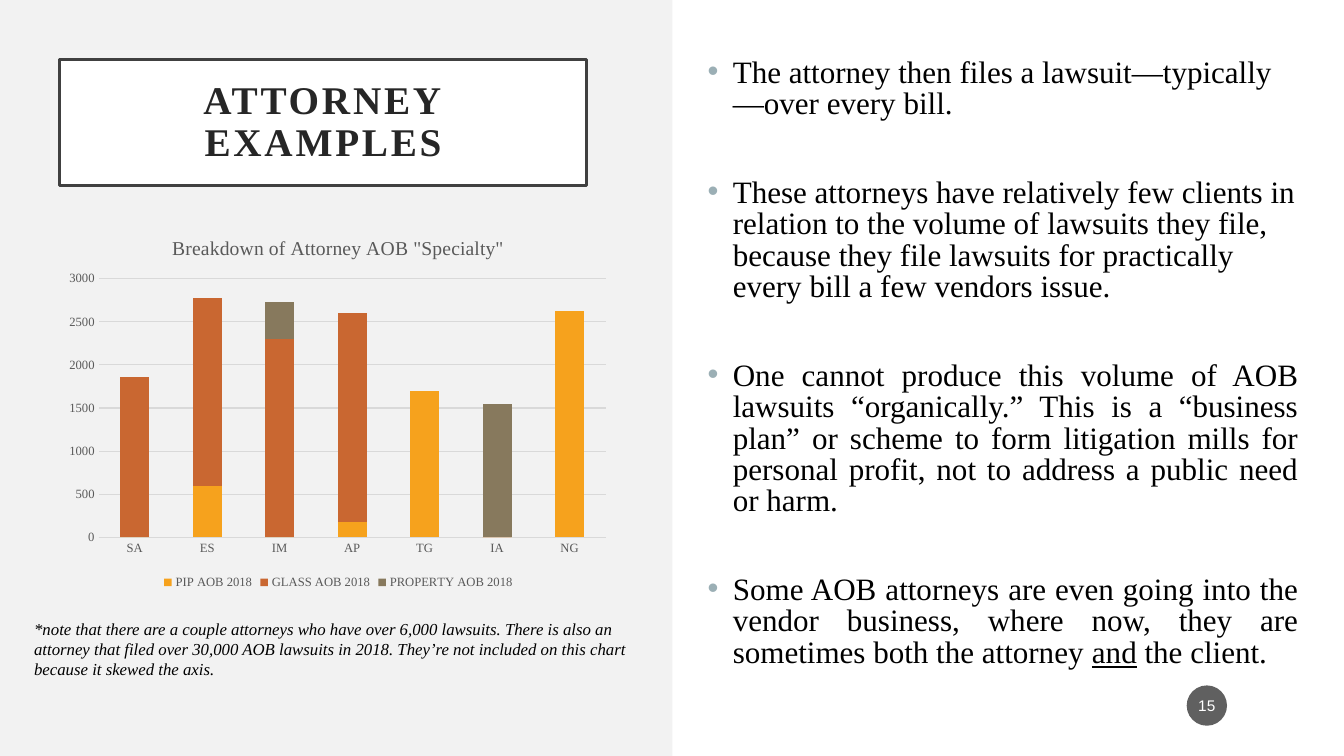
from pptx import Presentation
from pptx import util as u
from pptx.chart.data import CategoryChartData
from pptx.dml.color import RGBColor
from pptx.enum import chart as ch, shapes, text
from pptx.oxml import parse_xml
from pptx.oxml.ns import nsdecls, qn

SERIF = "Times New Roman"
GRAY = "595959"
RULE = "D9D9D9"


def color(value):
    return RGBColor.from_string(value)


def manual_layout(target=None, **fractions):
    modes = "".join(f'<c:{k}Mode val="edge"/>' for k in "xy")
    inner = '<c:layoutTarget val="inner"/>' if target else ""
    sizes = "".join(f'<c:{k} val="{v}"/>' for k, v in fractions.items())
    return parse_xml(f'<c:layout {nsdecls("c")}><c:manualLayout>{inner}{modes}{sizes}'
                     '</c:manualLayout></c:layout>')


class SlideBuilder:
    def __init__(self, prs, background):
        self.s = prs.slides.add_slide(prs.slide_layouts[6])
        self.s.background.fill.solid()
        self.s.background.fill.fore_color.rgb = color(background)

    def font(self, font, size, fill, name=SERIF):
        font.size, font.name = u.Pt(size), name
        font.color.rgb = color(fill)

    def run(self, p, words, size, fill="000000", name=SERIF, **style):
        r = p.add_run()
        r.text = words
        self.font(r.font, size, fill, name)
        for key, value in style.items():
            setattr(r.font, key, value)
        return r

    def shape(self, kind, box, fill, line=None, alpha=None):
        sp = self.s.shapes.add_shape(kind, *map(u.Inches, box))
        sp.shadow.inherit = False
        sp.fill.solid()
        sp.fill.fore_color.rgb = color(fill)
        if alpha:
            node = sp.fill._xPr.find(qn("a:solidFill"))[0]
            node.append(parse_xml(f'<a:alpha {nsdecls("a")} val="{alpha * 1000}"/>'))
        if line:
            sp.line.color.rgb = color(line)
            sp.line.width = u.Pt(2.5)
        else:
            sp.line.fill.background()
        return sp

    def centered(self, sp, margins):
        tf = sp.text_frame
        tf.word_wrap = True
        tf.vertical_anchor = text.MSO_ANCHOR.MIDDLE
        tf.margin_left = tf.margin_right = u.Inches(margins[0])
        tf.margin_top = tf.margin_bottom = u.Inches(margins[1])
        p = tf.paragraphs[0]
        p.alignment = text.PP_ALIGN.CENTER
        return p

    def textbox(self, box):
        tf = self.s.shapes.add_textbox(*map(u.Inches, box)).text_frame
        tf.word_wrap = True
        return tf

    def bullets(self, box, items):
        tf = self.textbox(box)
        for i, (align, runs) in enumerate(items):
            p = tf.add_paragraph() if i else tf.paragraphs[0]
            p.alignment = align
            p.line_spacing = 0.84
            p.space_before = u.Pt(41 if i else 0)
            pPr = p._p.get_or_add_pPr()
            pPr.set("marL", str(u.Inches(0.25)))
            pPr.set("indent", str(u.Inches(-0.25)))
            pPr.append(parse_xml(f'<a:buClr {nsdecls("a")}><a:srgbClr val="9BAFB5"/></a:buClr>'))
            pPr.append(parse_xml(f'<a:buFont {nsdecls("a")} typeface="Arial"/>'))
            pPr.append(parse_xml(f'<a:buChar {nsdecls("a")} char="•"/>'))
            for words, underline in runs:
                self.run(p, words, 22.2, underline=underline)

    def stacked_chart(self, box, title, categories, series):
        data = CategoryChartData()
        data.categories = categories
        for name, values, _ in series:
            data.add_series(name, values)
        chart = self.s.shapes.add_chart(ch.XL_CHART_TYPE.COLUMN_STACKED,
                                        *map(u.Inches, box), data).chart
        self.font(chart.font, 10, "000000")
        chart.has_title = True
        self.run(chart.chart_title.text_frame.paragraphs[0], title, 14, GRAY, bold=False)
        chart.chart_title._element.find(qn("c:tx")).addnext(manual_layout(x=0.2, y=0.04))
        chart.chart_title.include_in_layout = False

        chart.has_legend = True
        chart.legend.position = ch.XL_LEGEND_POSITION.BOTTOM
        chart.legend.include_in_layout = False
        self.font(chart.legend.font, 9, GRAY)

        for axis in (chart.category_axis, chart.value_axis):
            axis.major_tick_mark = axis.minor_tick_mark = ch.XL_TICK_MARK.NONE
            self.font(axis.tick_labels.font, 9, GRAY)
        value_axis = chart.value_axis
        value_axis.minimum_scale, value_axis.maximum_scale = 0, 3000
        value_axis.major_unit = 500
        value_axis.format.line.fill.background()
        for line in (chart.category_axis.format.line, value_axis.major_gridlines.format.line):
            line.color.rgb = color(RULE)
            line.width = u.Pt(0.75)

        plot = chart.plots[0]
        plot.gap_width, plot.overlap = 150, 100
        plot.vary_by_categories = False
        for bars, (_, _, fill) in zip(plot.series, series):
            bars.format.fill.solid()
            bars.format.fill.fore_color.rgb = color(fill)
        area = chart._chartSpace.chart.plotArea
        for old in area.findall(qn("c:layout")):
            area.remove(old)
        area.insert(0, manual_layout("inner", x=0.07, y=0.16, w=0.91, h=0.69))


def main():
    prs = Presentation()
    prs.slide_width, prs.slide_height = u.Inches(13.33), u.Inches(7.5)
    b = SlideBuilder(prs, "F2F2F2")
    rect, oval = shapes.MSO_SHAPE.RECTANGLE, shapes.MSO_SHAPE.OVAL
    left, justify = text.PP_ALIGN.LEFT, text.PP_ALIGN.JUSTIFY

    b.shape(rect, (6.67, 0, 6.66, 7.5), "FFFFFF")
    title = b.shape(rect, (0.59, 0.59, 5.23, 1.25), "FFFFFF", "404040")
    p = b.centered(title, (0.2, 0.2))
    p.line_spacing = 0.9
    r = b.run(p, "ATTORNEY EXAMPLES", 28, "262626", bold=True)
    r._r.get_or_add_rPr().set("spc", "200")

    b.bullets((6.92, 0.53, 6.06, 6.45), [
        (left, [("The attorney then files a lawsuit—typically—over every bill.", False)]),
        (left, [("These attorneys have relatively few clients in relation to the volume of "
                 "lawsuits they file, because they file lawsuits for practically every bill "
                 "a few vendors issue.", False)]),
        (justify, [("One cannot produce this volume of AOB lawsuits “organically.” This is a "
                    "“business plan” or scheme to form litigation mills for personal profit, "
                    "not to address a public need or harm.", False)]),
        (justify, [("Some AOB attorneys are even going into the vendor business, where now, "
                    "they are sometimes both the attorney ", False),
                   ("and", True), (" the client.", False)]),
    ])

    note = b.textbox((0.24, 6.09, 6.17, 0.71))
    b.run(note.paragraphs[0],
          "*note that there are a couple attorneys who have over 6,000 lawsuits. There is also "
          "an attorney that filed over 30,000 AOB lawsuits in 2018. They’re not included on "
          "this chart because it skewed the axis.", 12, italic=True)

    b.stacked_chart((0.59, 2.17, 5.53, 3.72), 'Breakdown of Attorney AOB "Specialty"',
                    ["SA", "ES", "IM", "AP", "TG", "IA", "NG"], [
        ("PIP AOB 2018", (0, 600, 0, 180, 1700, 0, 2620), "F6A21D"),
        ("GLASS AOB 2018", (1860, 2180, 2300, 2420, 0, 0, 0), "C96731"),
        ("PROPERTY AOB 2018", (0, 0, 430, 0, 0, 1550, 0), "87795D"),
    ])

    badge = b.shape(oval, (11.77, 6.8, 0.4, 0.4), "1D1D1D", alpha=70)
    b.run(b.centered(badge, (0.02, 0.05)), "15", 11, "FFFFFF", "Arial")
    prs.save("out.pptx")


if __name__ == "__main__":
    main()
